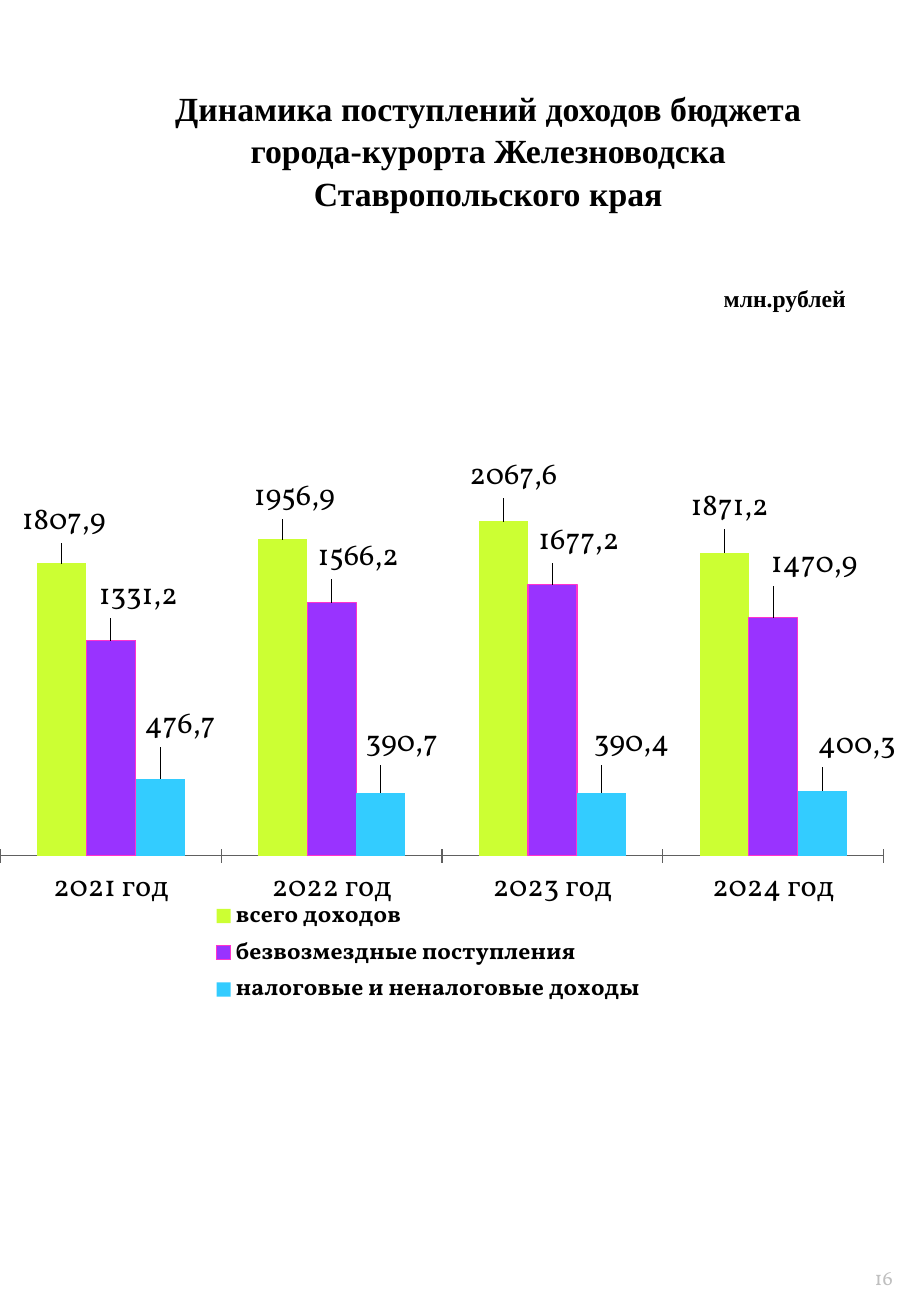
from lxml.etree import SubElement
from pptx import Presentation
from pptx.chart.data import CategoryChartData
from pptx.dml.color import RGBColor
from pptx.enum.chart import XL_CHART_TYPE, XL_LABEL_POSITION, XL_LEGEND_POSITION, XL_TICK_LABEL_POSITION, XL_TICK_MARK
from pptx.enum.shapes import MSO_SHAPE
from pptx.enum.text import MSO_ANCHOR, PP_ALIGN
from pptx.oxml import parse_xml
from pptx.oxml.ns import nsdecls, qn
from pptx.util import Inches, Pt

SLIDE_WIDTH = Inches(7.5)
SLIDE_HEIGHT = Inches(10.83)
COLUMN = SLIDE_WIDTH / 75
ROW = SLIDE_HEIGHT / 108.3

BLACK = RGBColor(0x00, 0x00, 0x00)
GRAY = RGBColor(0xBF, 0xBF, 0xBF)
AXIS_GRAY = RGBColor(0x60, 0x60, 0x60)
LIME = RGBColor(0xCC, 0xFF, 0x33)
VIOLET = RGBColor(0x99, 0x33, 0xFF)
PINK = RGBColor(0xFF, 0x33, 0xCC)
SKY = RGBColor(0x33, 0xCC, 0xFF)

SERIF = "Times New Roman"
VOLLKORN = "Vollkorn"

YEARS = ["2021 год", "2022 год", "2023 год", "2024 год"]
REVENUES = [
    ("всего доходов", [1807.9, 1956.9, 2067.6, 1871.3], LIME, None,
     ["1807,9", "1956,9", "2067,6", "1871,2"],
     [(0.2, -2.6), (1.3, -2.6), (1.1, -3.2), (0.6, -3.3)]),
    ("безвозмездные поступления", [1331.2, 1566.2, 1677.2, 1471], VIOLET, PINK,
     ["1331,2", "1566,2", "1677,2", "1470,9"],
     [(3, -3), (2.9, -3.2), (2.9, -2.8), (4.5, -4.7)]),
    ("налоговые и неналоговые доходы", [476.7, 390.7, 390.4, 400.3], SKY, None,
     ["476,7", "390,7", "390,4", "400,3"],
     [(2.2, -4.6), (2.3, -3.9), (3.3, -3.9), (3.8, -3.3)]),
]


def place(left, top, width, height):
    return int(left * COLUMN), int(top * ROW), int(width * COLUMN), int(height * ROW)


def set_font(font, name, size, color=BLACK, bold=False):
    font.name = name
    font.size = Pt(size)
    font.bold = bold
    font.color.rgb = color


def write(shape, text, alignment, name, size, color=BLACK, bold=False):
    shape.text_frame.word_wrap = True
    paragraph = shape.text_frame.paragraphs[0]
    paragraph.alignment = alignment
    run = paragraph.add_run()
    run.text = text
    set_font(run.font, name, size, color, bold)
    return paragraph


def add_text_shadow(run):
    shadow = parse_xml(
        f'<a:effectLst {nsdecls("a")}><a:outerShdw blurRad="38100" dist="38100" dir="2700000" algn="tl">'
        '<a:srgbClr val="000000"><a:alpha val="43000"/></a:srgbClr></a:outerShdw></a:effectLst>')
    run.font.fill._xPr.find(qn("a:solidFill")).addnext(shadow)


def add_title(slide, text):
    shape = slide.shapes.add_shape(MSO_SHAPE.ROUNDED_RECTANGLE, *place(7.8, 3.4, 64.8, 97.7))
    shape.shadow.inherit = False
    shape.fill.background()
    shape.line.fill.background()
    shape.text_frame.vertical_anchor = MSO_ANCHOR.TOP
    paragraph = write(shape, text, PP_ALIGN.CENTER, SERIF, 20, bold=True)
    paragraph.line_spacing = 1.05
    add_text_shadow(paragraph.runs[0])


def add_page_number(slide, number):
    box = slide.shapes.add_textbox(*place(69.2, 100.3, 4.3, 5.8))
    frame = box.text_frame
    frame.margin_left = frame.margin_right = frame.margin_top = frame.margin_bottom = 0
    frame.vertical_anchor = MSO_ANCHOR.BOTTOM
    write(box, number, PP_ALIGN.RIGHT, VOLLKORN, 12, GRAY)


def add_unit(slide, text):
    box = slide.shapes.add_textbox(*place(58.6, 22.9, 12.9, 3.4))
    write(box, text, PP_ALIGN.LEFT, SERIF, 14, bold=True)


def make_layout(settings):
    layout = parse_xml(f'<c:layout {nsdecls("c")}/>')
    manual = SubElement(layout, qn("c:manualLayout"))
    for name, value in settings.items():
        SubElement(manual, qn(f"c:{name}")).set("val", str(value))
    return layout


def drop_layout(element):
    for layout in element.findall(qn("c:layout")):
        element.remove(layout)


def add_label(series, index, text, offset):
    label = series.points[index].data_label
    run = label.text_frame.paragraphs[0].add_run()
    run.text = text
    set_font(run.font, VOLLKORN, 18)
    label.position = XL_LABEL_POSITION.OUTSIDE_END
    element = series._element.find(qn("c:dLbls")).findall(qn("c:dLbl"))[index]
    drop_layout(element)
    across, down = offset
    layout = make_layout({"x": round(across / 100, 4), "y": round(down / 100, 4)})
    element.find(qn("c:idx")).addnext(layout)


def style_series(series, color, outline, texts, offsets):
    series.invert_if_negative = False
    series.format.fill.solid()
    series.format.fill.fore_color.rgb = color
    if outline:
        series.format.line.color.rgb = outline
        series.format.line.width = Pt(0.75)
    else:
        series.format.line.fill.background()
    labels = series.data_labels
    labels.show_value = True
    labels.number_format = "0.0"
    labels.number_format_is_linked = False
    for index, (text, offset) in enumerate(zip(texts, offsets)):
        add_label(series, index, text, offset)


def style_axes(chart):
    values = chart.value_axis
    values.minimum_scale = 0
    values.maximum_scale = 2500
    values.has_major_gridlines = False
    values.tick_labels.number_format = "0.0"
    values.tick_labels.number_format_is_linked = False
    values.visible = False
    years = chart.category_axis
    years.major_tick_mark = XL_TICK_MARK.CROSS
    years.tick_label_position = XL_TICK_LABEL_POSITION.NEXT_TO_AXIS
    years.format.line.color.rgb = AXIS_GRAY
    years.format.line.width = Pt(0.75)


def add_legend(chart):
    chart.has_legend = True
    legend = chart.legend
    legend.position = XL_LEGEND_POSITION.RIGHT
    legend.include_in_layout = False
    set_font(legend.font, VOLLKORN, 14, bold=True)
    drop_layout(legend._element)
    layout = make_layout({"xMode": "edge", "yMode": "edge", "x": 0.22, "y": 0.8, "w": 0.5, "h": 0.2})
    legend._element.find(qn("c:overlay")).addprevious(layout)


def add_revenue_chart(slide):
    data = CategoryChartData(number_format="0.0")
    data.categories = YEARS
    for name, values, *_ in REVENUES:
        data.add_series(name, values)
    frame = slide.shapes.add_chart(XL_CHART_TYPE.COLUMN_CLUSTERED, *place(0, 36.2, 75, 46.9), data)
    chart = frame.chart
    chart.has_title = False
    set_font(chart.font, VOLLKORN, 18)
    plot = chart.plots[0]
    plot.gap_width = 150
    plot.overlap = 0
    plot.vary_by_categories = False
    for series, (_, _, color, outline, texts, offsets) in zip(plot.series, REVENUES):
        style_series(series, color, outline, texts, offsets)
    style_axes(chart)
    add_legend(chart)
    plot_area = chart._chartSpace.chart.plotArea
    drop_layout(plot_area)
    plot_area.insert(0, make_layout({"layoutTarget": "inner", "xMode": "edge", "yMode": "edge",
                                     "x": 0, "y": 0.02, "w": 0.97, "h": 0.71}))


def main():
    presentation = Presentation()
    presentation.slide_width = SLIDE_WIDTH
    presentation.slide_height = SLIDE_HEIGHT
    slide = presentation.slides.add_slide(presentation.slide_layouts[6])
    add_title(slide, "Динамика поступлений доходов бюджета города-курорта Железноводска Ставропольского края")
    add_page_number(slide, "16")
    add_unit(slide, "млн.рублей")
    add_revenue_chart(slide)
    presentation.save("out.pptx")


if __name__ == "__main__":
    main()
